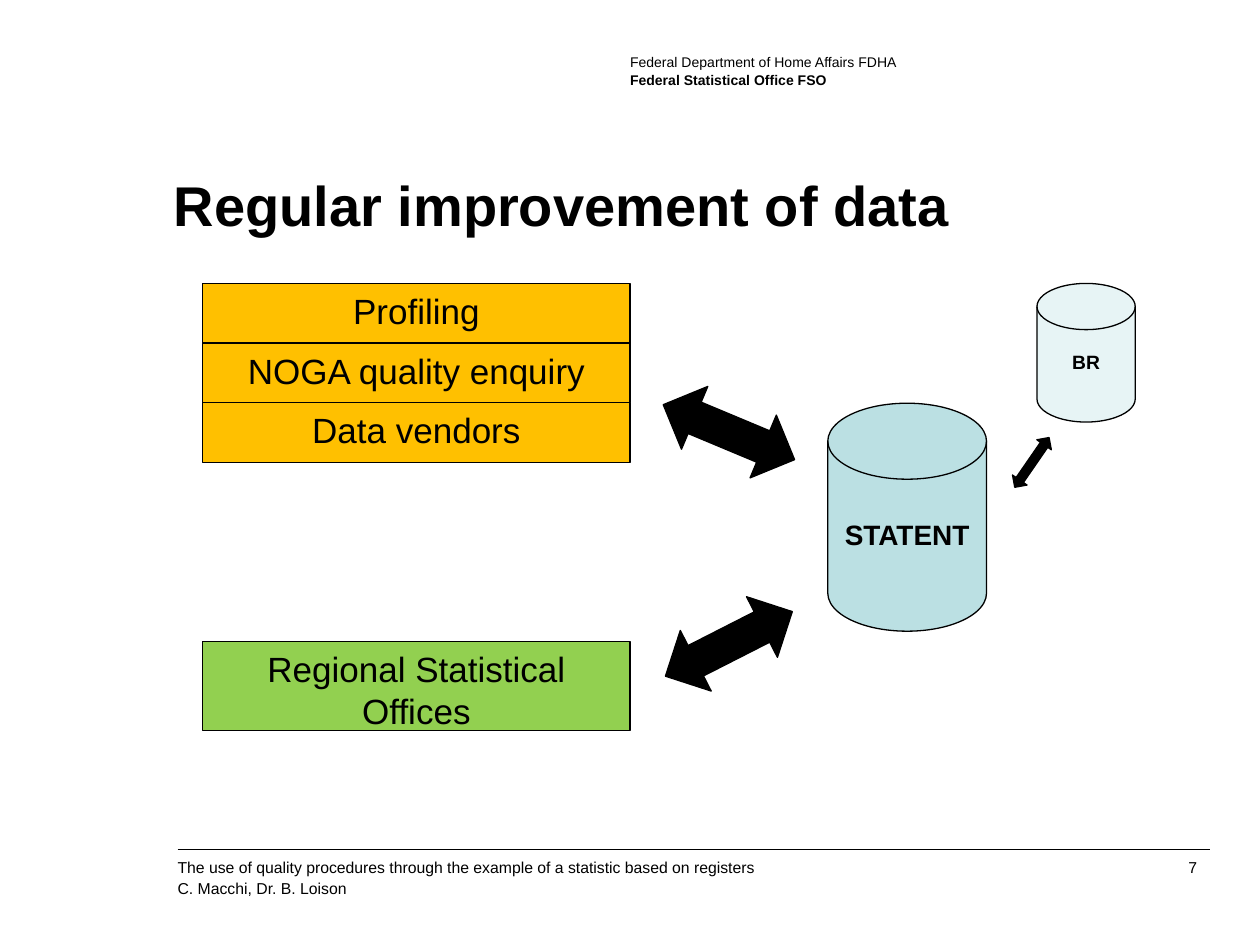
from lxml import etree
from pptx import Presentation
from pptx.dml.color import RGBColor
from pptx.enum.shapes import MSO_CONNECTOR, MSO_SHAPE
from pptx.enum.text import MSO_ANCHOR, PP_ALIGN
from pptx.oxml.ns import qn
from pptx.util import Inches, Pt

RECTANGLE = MSO_SHAPE.RECTANGLE
CYLINDER = MSO_SHAPE.FLOWCHART_MAGNETIC_DISK
DOUBLE_ARROW = MSO_SHAPE.LEFT_RIGHT_ARROW
LEFT, CENTER, RIGHT = PP_ALIGN.LEFT, PP_ALIGN.CENTER, PP_ALIGN.RIGHT
BLACK = "000000"

presentation = Presentation()
presentation.slide_width = Inches(10)
presentation.slide_height = Inches(7.5)
slide = presentation.slides.add_slide(presentation.slide_layouts[6])


def add_block(kind, box, fill, rotation=0):
    shape = slide.shapes.add_shape(kind, *map(Inches, box))
    shape.shadow.inherit = False
    shape.rotation = rotation
    shape.fill.solid()
    shape.fill.fore_color.rgb = RGBColor.from_string(fill)
    shape.line.color.rgb = RGBColor.from_string(BLACK)
    shape.line.width = Pt(0.75)
    return shape


def write(shape, text, size, bold=False, align=LEFT, spacing=None, inset=True):
    frame = shape.text_frame
    frame.text = text
    frame.word_wrap = True
    frame.vertical_anchor = MSO_ANCHOR.TOP
    if not inset:
        frame.margin_left = frame.margin_right = 0
        frame.margin_top = frame.margin_bottom = 0
    paragraph = frame.paragraphs[0]
    paragraph.alignment = align
    paragraph.line_spacing = spacing
    for run in paragraph.runs:
        run.font.name = "Arial"
        run.font.size = Pt(size)
        run.font.bold = bold
        run.font.color.rgb = RGBColor.from_string(BLACK)
    return paragraph


# Header, title and footer; \v is a line break within the paragraph
page_texts = [
    ((5, 0.42, 3.92, 0.28),
     "Federal Department of Home Affairs FDHA\vFederal Statistical Office FSO",
     8, False, LEFT, 1.05),
    ((1.38, 1.39, 8.16, 0.95), "Regular improvement of data",
     32, True, LEFT, Pt(36)),
    ((1.41, 6.79, 7.77, 0.33),
     "The use of quality procedures through the example of a statistic "
     "based on registers\vC. Macchi, Dr. B. Loison",
     9, False, LEFT, Pt(12)),
    ((7.05, 6.79, 2.45, 0.17), "7", 9, False, RIGHT, Pt(12)),
]
for box, text, size, bold, align, spacing in page_texts:
    text_box = slide.shapes.add_textbox(*map(Inches, box))
    paragraph = write(text_box, text, size, bold, align, spacing, inset=False)
    if "FSO" in text:
        paragraph.runs[-1].font.bold = True

# Footer rule
rule = slide.shapes.add_connector(
    MSO_CONNECTOR.STRAIGHT, *map(Inches, (1.41, 6.74, 9.6, 6.74)))
rule.line.color.rgb = RGBColor.from_string(BLACK)
rule.line.width = Pt(0.75)
etree.SubElement(rule._element.spPr, qn("a:effectLst"))

# Data sources: three stacked rows, and the regional offices below
column_left, column_width = 1.61, 3.39
stack_top, row_height = 2.25, 0.473
for row, source in enumerate(["Profiling", "NOGA quality enquiry", "Data vendors"]):
    box = (column_left, stack_top + row * row_height, column_width, row_height)
    write(add_block(RECTANGLE, box, "FFC000"), source, 20, align=CENTER)
offices = add_block(RECTANGLE, (column_left, 5.09, column_width, 0.71), "92D050")
write(offices, "Regional Statistical Offices", 20, align=CENTER)

# Registers, each with its label over the cylinder
registers = [
    ("STATENT", (6.57, 3.2, 1.26, 1.81), "BBE0E3", 4.06, 0.37, 16),
    ("BR", (8.23, 2.25, 0.78, 1.1), "E7F4F5", 2.73, 0.29, 11),
]
for name, box, fill, label_top, label_height, size in registers:
    add_block(CYLINDER, box, fill)
    label_box = (box[0], label_top, box[2], label_height)
    label = slide.shapes.add_textbox(*map(Inches, label_box))
    write(label, name, size, bold=True, align=CENTER)

# Exchange arrows
for box, rotation in [((5.22, 3.16, 1.13, 0.54), 22.7),
                      ((5.22, 4.84, 1.13, 0.54), 333),
                      ((7.95, 3.6, 0.48, 0.14), 304.6)]:
    add_block(DOUBLE_ARROW, box, BLACK, rotation)

presentation.save("out.pptx")
